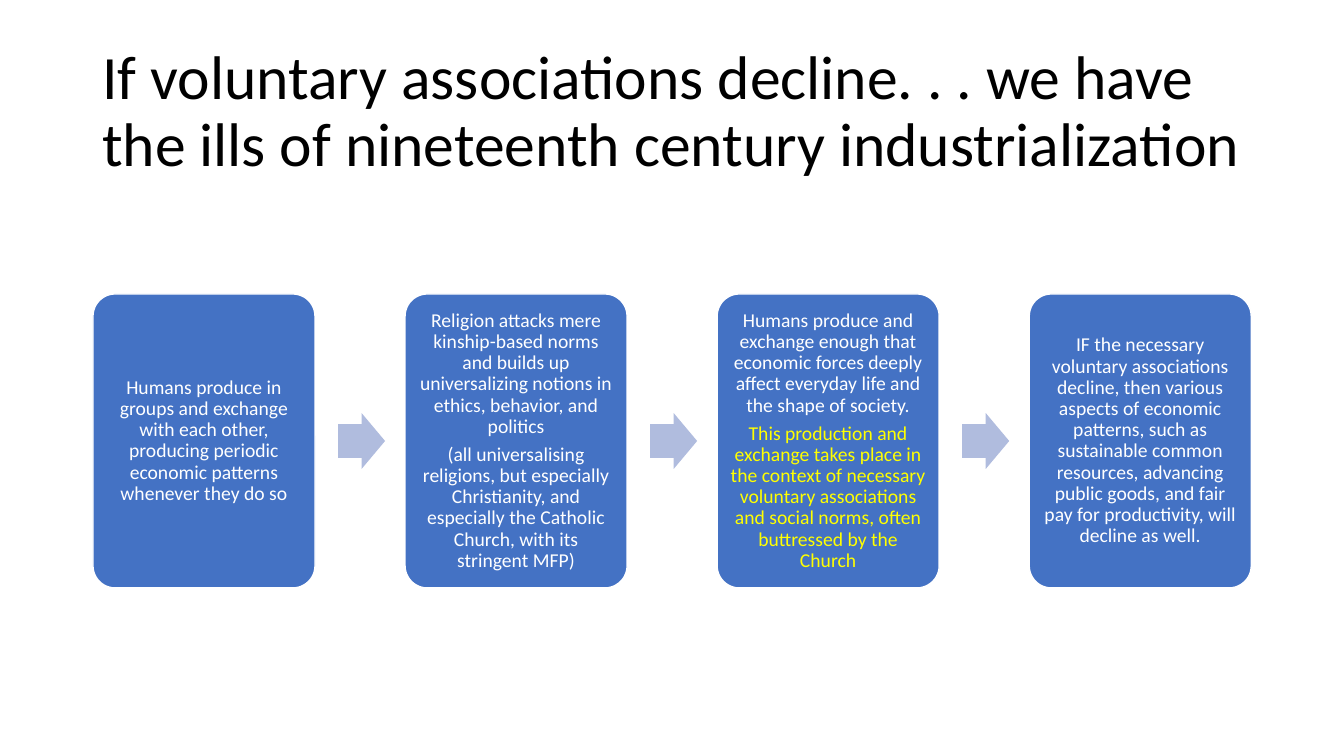
from pptx import Presentation
from pptx.dml.color import RGBColor
from pptx.enum.shapes import MSO_SHAPE
from pptx.enum.text import MSO_ANCHOR, MSO_AUTO_SIZE, PP_ALIGN
from pptx.util import Emu, Inches, Pt

PX_PER_INCH = 100.8
BLACK, WHITE, BLUE, PALE_BLUE, YELLOW = "000000", "FFFFFF", "4472C4", "B0BCDE", "FFFF00"


def px(length):
    return Emu(round(length * 914400 / PX_PER_INCH))


def color(hex_string):
    return RGBColor.from_string(hex_string)


class FlowSlide:
    font_name = "Calibri"
    line_spacing = 0.9

    def __init__(self, presentation):
        self.slide = presentation.slides.add_slide(presentation.slide_layouts[5])

    def style(self, paragraph, size, text_color, alignment):
        paragraph.alignment = alignment
        paragraph.line_spacing = self.line_spacing
        paragraph.font.name = self.font_name
        paragraph.font.size = Pt(size)
        paragraph.font.color.rgb = color(text_color)

    def title(self, text, left, top, width, height):
        title = self.slide.shapes.title
        title.left, title.top = px(left), px(top)
        title.width, title.height = px(width), px(height)
        frame = title.text_frame
        frame.text = text
        frame.word_wrap = True
        frame.auto_size = MSO_AUTO_SIZE.NONE
        frame.vertical_anchor = MSO_ANCHOR.MIDDLE
        self.style(frame.paragraphs[0], 44, BLACK, PP_ALIGN.LEFT)

    def shape(self, kind, left, top, width, height, fill, adjustments):
        shape = self.slide.shapes.add_shape(kind, px(left), px(top), px(width), px(height))
        for index, value in enumerate(adjustments):
            shape.adjustments[index] = value
        shape.shadow.inherit = False
        shape.fill.solid()
        shape.fill.fore_color.rgb = color(fill)
        shape.line.fill.background()
        return shape

    def card(self, paragraphs, left, top, width, height):
        card = self.shape(MSO_SHAPE.ROUNDED_RECTANGLE, left, top, width, height, BLUE, [0.1])
        card.line.color.rgb = color(WHITE)
        card.line.width = Pt(1)
        frame = card.text_frame
        frame.word_wrap = True
        frame.vertical_anchor = MSO_ANCHOR.MIDDLE
        frame.margin_left = frame.margin_right = px(6)
        frame.margin_top = frame.margin_bottom = px(6)
        for index, (text, text_color) in enumerate(paragraphs):
            paragraph = frame.add_paragraph() if index else frame.paragraphs[0]
            paragraph.text = text
            paragraph.space_after = Pt(5)
            self.style(paragraph, 14, text_color, PP_ALIGN.CENTER)

    def arrow(self, left, top, width, height):
        self.shape(MSO_SHAPE.RIGHT_ARROW, left, top, width, height, PALE_BLUE, [0.6, 0.5])


STEPS = [
    [("Humans produce in groups and exchange with each other, producing periodic "
      "economic patterns whenever they do so", WHITE)],
    [("Religion attacks mere kinship-based norms and builds up universalizing notions "
      "in ethics, behavior, and politics", WHITE),
     ("(all universalising religions, but especially Christianity, and especially the "
      "Catholic Church, with its stringent MFP)", WHITE)],
    [("Humans produce and exchange enough that economic forces deeply affect everyday "
      "life and the shape of society.", WHITE),
     ("This production and exchange takes place in the context of necessary voluntary "
      "associations and social norms, often buttressed by the Church", YELLOW)],
    [("IF the necessary voluntary associations decline, then various aspects of economic "
      "patterns, such as sustainable common resources, advancing public goods, and fair "
      "pay for productivity, will decline as well.", WHITE)],
]


def main():
    presentation = Presentation()
    presentation.slide_width, presentation.slide_height = Inches(13.33), Inches(7.5)
    flow = FlowSlide(presentation)

    # Title
    flow.title("If voluntary associations decline. . . we have the ills of "
               "nineteenth century industrialization", 92, 40, 1160, 146)

    # Cards in a row, with an arrow after each but the last
    first_left, pitch = 93, 312
    for index, paragraphs in enumerate(STEPS):
        left = first_left + index * pitch
        flow.card(paragraphs, left, 294, 222, 294)
        if index < len(STEPS) - 1:
            flow.arrow(left + 245, 413, 47, 56)

    presentation.save("out.pptx")


if __name__ == "__main__":
    main()
